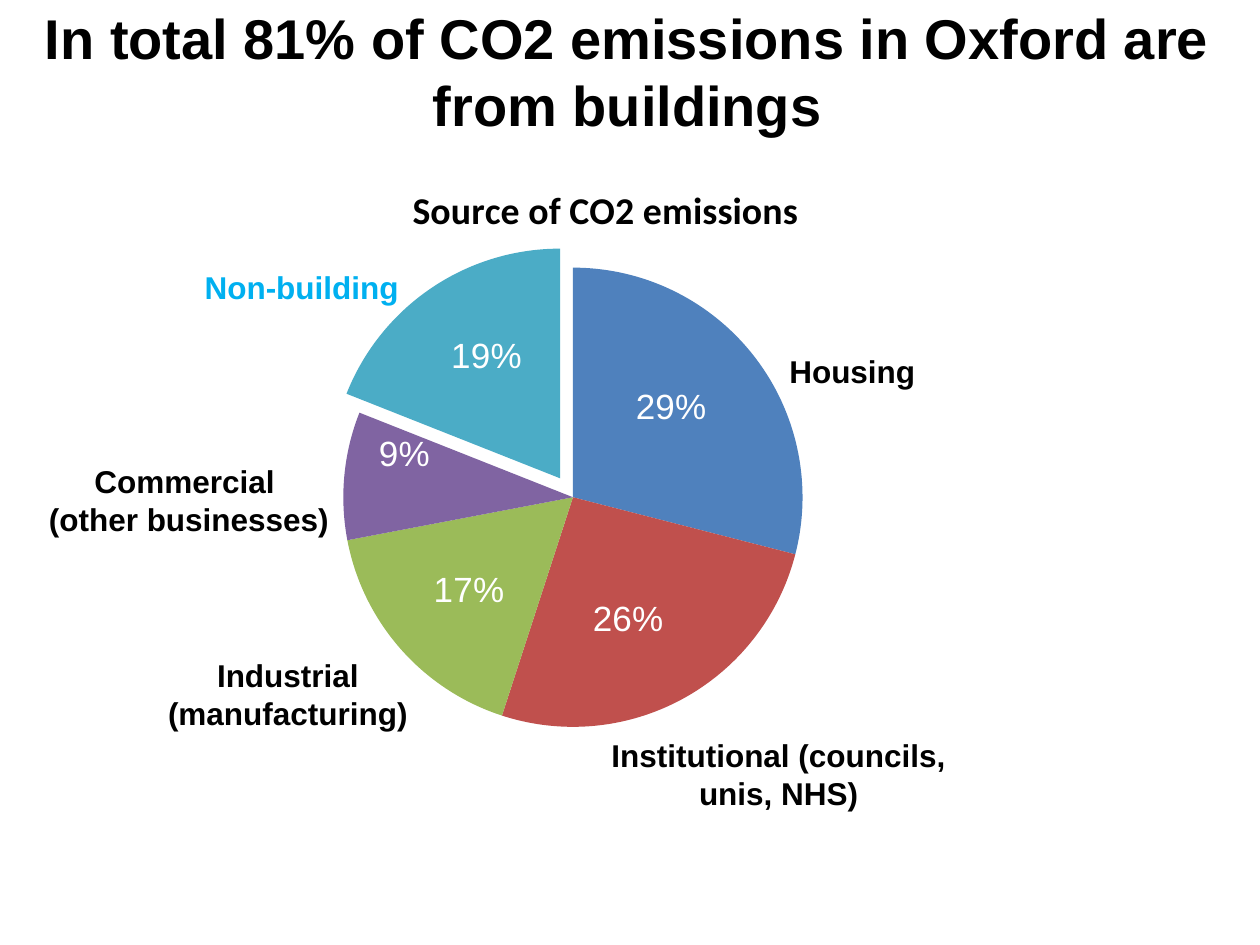
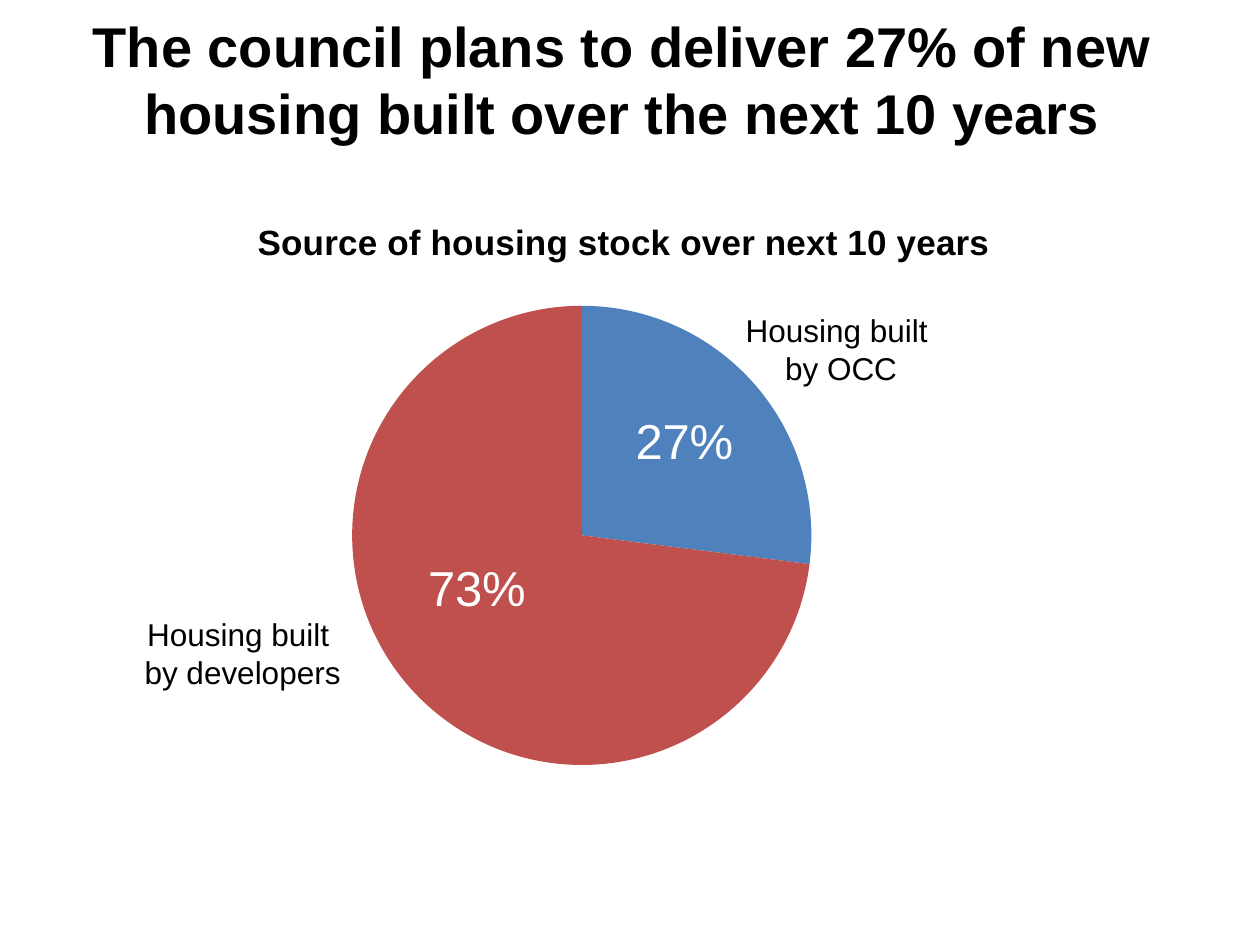
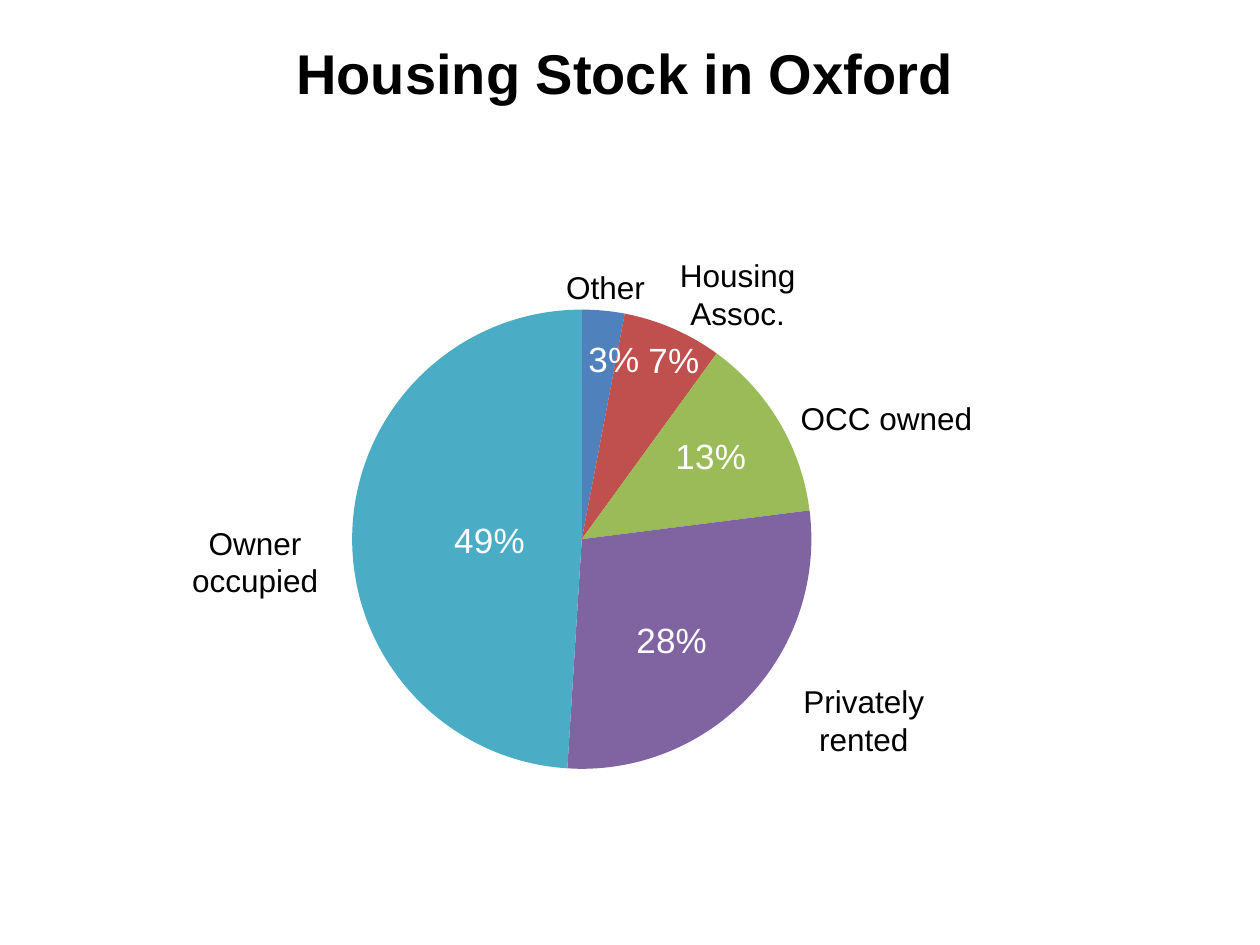
from pptx import Presentation
from pptx.chart.data import CategoryChartData
from pptx.dml.color import RGBColor
from pptx.enum.chart import XL_CHART_TYPE as ChartType, XL_LABEL_POSITION as LabelPosition
from pptx.enum.text import MSO_ANCHOR as Anchor, MSO_AUTO_SIZE as AutoSize, PP_ALIGN as Align
from pptx.oxml import parse_xml
from pptx.oxml.ns import nsdecls
from pptx.util import Inches, Pt

BLACK, WHITE, SKY = "000000", "FFFFFF", "00B0F0"
BLUE, RED, GREEN, PURPLE, TEAL = "4F81BD", "C0504D", "9BBB59", "8064A2", "4BACC6"
FONT = "Arial"
PLOT_LEFT, PLOT_WIDTH, PLOT_HEIGHT = 0.245, 0.405, 0.697

# Boxes are (left, top, width, height) in inches.
# Each slice is (share, colour, value label shift in inches from the slice centre).
# Each caption is (lines, box, colour).
SLIDES = [
    {
        "title": "In total 81% of CO2 emissions in Oxford are from buildings",
        "title_box": (0, 0.13, 9.96, 0.86),
        "chart_box": (0.52, 1.19, 9, 5.91),
        "plot_top": 0.118,
        "chart_title": ("Source of CO2 emissions", 21.6, "Calibri", (0.3, 0.035)),
        "value_size": 20,
        "slices": [
            (0.29, BLUE, (0.06, -0.15)),
            (0.26, RED, (0, 0.17)),
            (0.17, GREEN, (-0.14, 0.14)),
            (0.09, PURPLE, (-0.43, -0.25)),
            (0.19, TEAL, (-0.07, -0.21)),
        ],
        "exploded": 4,
        "bold_captions": True,
        "captions": [
            (["Non-building"], (1.46, 1.86, 1.87, 0.84), SKY),
            (["Housing"], (5.83, 2.44, 1.87, 1), BLACK),
            (["Institutional (councils, unis, NHS)"], (4.66, 5.64, 3.04, 1), BLACK),
            (["Industrial (manufacturing)"], (1.22, 5.01, 2.13, 1), BLACK),
            (["Commercial ", "(other businesses)"], (0.28, 3.47, 2.44, 1), BLACK),
        ],
    },
    {
        "title": "The council plans to deliver 27% of new housing built over the next 10 years",
        "title_box": (0, 0, 9.88, 1.25),
        "chart_box": (0.59, 1.47, 9, 5.51),
        "plot_top": 0.156,
        "chart_title": ("Source of housing stock over next 10 years", 20, FONT, (0.156, 0.04)),
        "value_size": 28,
        "slices": [(0.27, BLUE, (0.13, -0.13)), (0.73, RED, (-0.15, -0.17))],
        "captions": [
            (["Housing built ", "by OCC"], (5.58, 2.27, 2.19, 1), BLACK),
            (["Housing built ", "by developers"], (0.83, 4.68, 2.19, 1), BLACK),
        ],
    },
    {
        "title": "Housing Stock in Oxford",
        "title_box": (0.04, 0.3, 9.84, 0.54),
        "chart_box": (0.59, 1.31, 9, 5.83),
        "plot_top": 0.161,
        "value_size": 20,
        "slices": [
            (0.03, BLUE, (0.17, -0.51)),
            (0.07, RED, (0.37, -0.57)),
            (0.13, GREEN, (0.24, -0.18)),
            (0.28, PURPLE, (0.05, 0.19)),
            (0.49, TEAL, (0.18, 0.05)),
        ],
        "captions": [
            (["Housing Assoc."], (4.92, 1.94, 1.87, 0.79), BLACK),
            (["Other"], (4.13, 1.78, 1.35, 1), BLACK),
            (["OCC owned"], (6.1, 2.92, 1.87, 0.79), BLACK),
            (["Privately rented"], (5.92, 5.32, 1.87, 0.79), BLACK),
            (["Owner occupied"], (1.09, 4.06, 1.87, 0.79), BLACK),
        ],
    },
]


def style_font(font, size, color=BLACK, bold=False, name=FONT):
    font.size, font.bold, font.name = Pt(size), bold, name
    font.color.rgb = RGBColor.from_string(color)


def fill_text(shape, lines, size, color, bold):
    text_frame = shape.text_frame
    text_frame.text = "\n".join(lines)
    text_frame.word_wrap = True
    text_frame.auto_size = AutoSize.NONE
    text_frame.vertical_anchor = Anchor.MIDDLE
    for paragraph in text_frame.paragraphs:
        paragraph.alignment = Align.CENTER
        for run in paragraph.runs:
            style_font(run.font, size, color, bold)


def set_layout(element, index, **settings):
    """Give a chart element a manual layout, placed as its child number index."""
    for old_layout in element.xpath("./c:layout"):
        element.remove(old_layout)
    items = "".join(f'<c:{key} val="{value}"/>' for key, value in settings.items())
    element.insert(index, parse_xml(
        f"<c:layout {nsdecls('c')}><c:manualLayout>{items}</c:manualLayout></c:layout>"))


def add_pie(slide, content):
    data = CategoryChartData(number_format="0%")
    slices = content["slices"]
    data.categories = [str(number) for number in range(1, len(slices) + 1)]
    data.add_series("Series 1", [share for share, _, _ in slices])
    box = content["chart_box"]
    chart = slide.shapes.add_chart(ChartType.PIE, *map(Inches, box), data).chart
    chart.has_legend = False
    style_font(chart.font, 18, name="Calibri")

    chart.has_title = "chart_title" in content
    if chart.has_title:
        text, size, font_name, (x, y) = content["chart_title"]
        chart.chart_title.text_frame.text = text
        run = chart.chart_title.text_frame.paragraphs[0].runs[0]
        style_font(run.font, size, bold=True, name=font_name)
        set_layout(chart.element.xpath("./c:chart/c:title")[0], 1,
                   xMode="edge", yMode="edge", x=x, y=y)
    set_layout(chart.element.xpath("./c:chart/c:plotArea")[0], 0,
               layoutTarget="inner", xMode="edge", yMode="edge",
               x=PLOT_LEFT, y=content["plot_top"], w=PLOT_WIDTH, h=PLOT_HEIGHT)

    plot = chart.plots[0]
    plot.vary_by_categories = True
    series = plot.series[0]
    labels = series.data_labels
    labels.show_value = True
    labels.number_format, labels.number_format_is_linked = "0%", False
    style_font(labels.font, content["value_size"], WHITE)
    for index, (_, color, (shift_x, shift_y)) in enumerate(slices):
        point = series.points[index]
        point.format.fill.solid()
        point.format.fill.fore_color.rgb = RGBColor.from_string(color)
        style_font(point.data_label.font, content["value_size"], WHITE)
        point.data_label.position = LabelPosition.CENTER
        label = chart.element.xpath(f".//c:dLbl[c:idx/@val='{index}']")[0]
        set_layout(label, 1, x=round(shift_x / box[2], 4), y=round(shift_y / box[3], 4))
        if index == content.get("exploded"):
            shape_format = chart.element.xpath(f".//c:dPt[c:idx/@val='{index}']/c:spPr")[0]
            shape_format.addprevious(parse_xml(f"<c:explosion {nsdecls('c')} val=\"10\"/>"))


def add_slide(presentation, content):
    slide = presentation.slides.add_slide(presentation.slide_layouts[5])
    title = slide.shapes.title
    title.left, title.top, title.width, title.height = map(Inches, content["title_box"])
    fill_text(title, [content["title"]], 32, BLACK, True)
    add_pie(slide, content)
    for lines, box, color in content["captions"]:
        caption = slide.shapes.add_textbox(*map(Inches, box))
        fill_text(caption, lines, 18, color, content.get("bold_captions", False))


def main():
    presentation = Presentation()
    presentation.slide_width, presentation.slide_height = Inches(10), Inches(7.5)
    for content in SLIDES:
        add_slide(presentation, content)
    presentation.save("out.pptx")


if __name__ == "__main__":
    main()
